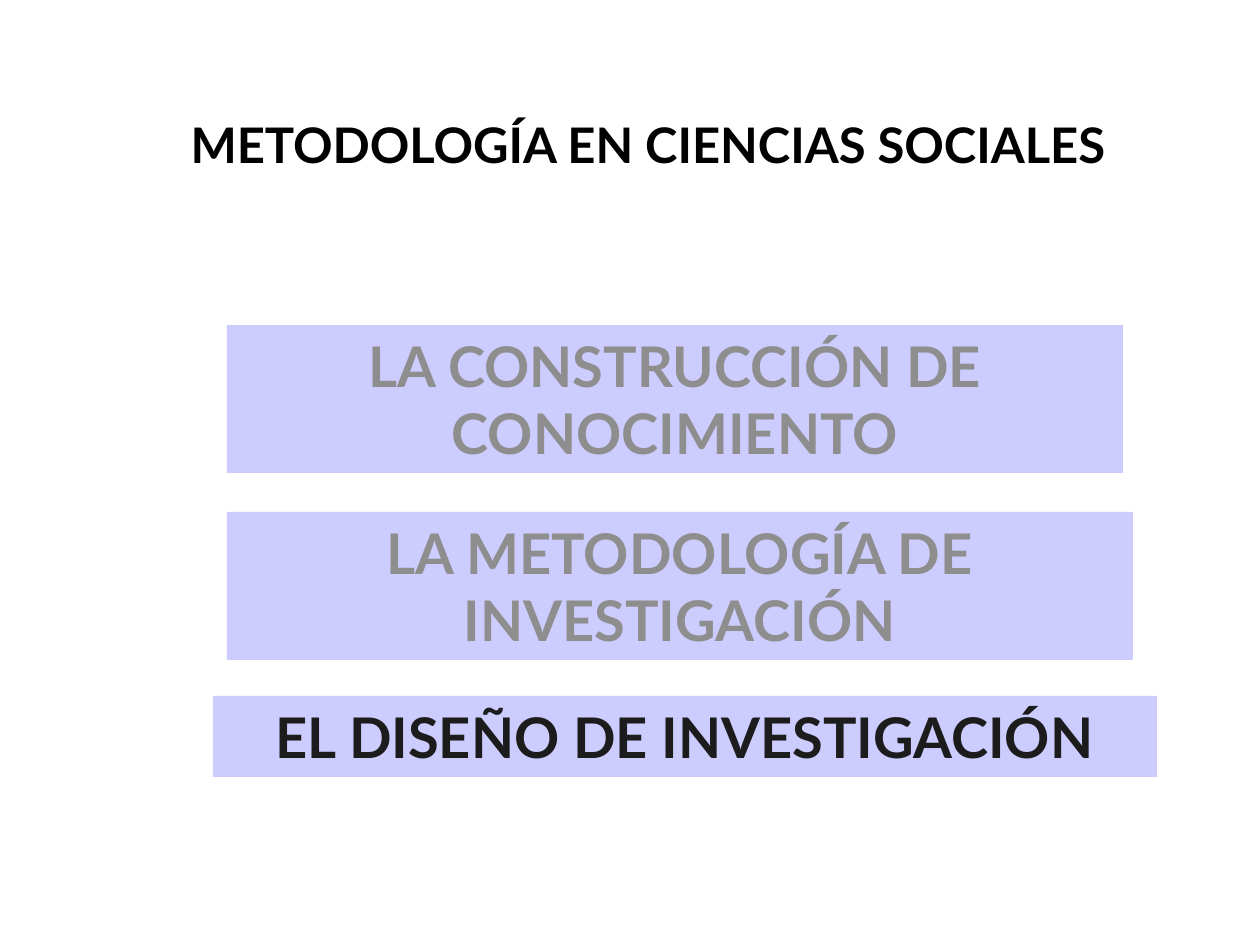
import dataclasses

import pptx
import pptx.dml.color
import pptx.enum.shapes
import pptx.enum.text
import pptx.util

EMU_PER_PX = 914400 / 126
COLORS = {"title": "000000", "band": "CCCCFF", "muted": "8E8E8E", "active": "1C1C1C"}
FRAME_FORMAT = {
    "word_wrap": True,
    "auto_size": pptx.enum.text.MSO_AUTO_SIZE.NONE,
    "vertical_anchor": pptx.enum.text.MSO_ANCHOR.TOP,
}


@dataclasses.dataclass
class Topic:
    text: str
    left: int
    top: int
    width: int
    height: int
    color: str


TOPICS = [
    Topic("LA CONSTRUCCIÓN DE CONOCIMIENTO", 227, 325, 896, 148, "muted"),
    Topic("LA METODOLOGÍA DE INVESTIGACIÓN", 227, 512, 906, 148, "muted"),
    Topic("EL DISEÑO DE INVESTIGACIÓN", 213, 696, 944, 81, "active"),
]


def px(length: int) -> int:
    return pptx.util.Emu(round(length * EMU_PER_PX))


def rgb(name: str) -> pptx.dml.color.RGBColor:
    return pptx.dml.color.RGBColor.from_string(COLORS[name])


def apply_format(target, values: dict) -> None:
    for name, value in values.items():
        setattr(target, name, value)


def write_text(shape, text: str, size: int, color: str, alignment) -> None:
    apply_format(shape.text_frame, FRAME_FORMAT)
    para = shape.text_frame.paragraphs[0]
    para.alignment = alignment
    span = para.add_run()
    span.text = text
    apply_format(span.font, {"name": "Lato", "size": pptx.util.Pt(size), "bold": True})
    span.font.color.rgb = rgb(color)


def draw_title(slide, text: str) -> None:
    title = slide.shapes.title
    apply_format(
        title,
        {"left": px(178), "top": px(108), "width": px(1053), "height": px(72)},
    )
    write_text(title, text, 28, "title", pptx.enum.text.PP_ALIGN.LEFT)


def draw_topic(slide, topic: Topic) -> None:
    box = slide.shapes.add_shape(
        pptx.enum.shapes.MSO_SHAPE.RECTANGLE,
        px(topic.left), px(topic.top), px(topic.width), px(topic.height),
    )
    box.shadow.inherit = False
    box.fill.solid()
    box.fill.fore_color.rgb = rgb("band")
    box.line.fill.background()
    write_text(box, topic.text, 32, topic.color, pptx.enum.text.PP_ALIGN.CENTER)


def main() -> None:
    deck = pptx.Presentation()
    apply_format(deck, {"slide_width": px(1260), "slide_height": px(945)})
    slide = deck.slides.add_slide(deck.slide_layouts[5])
    draw_title(slide, "METODOLOGÍA EN CIENCIAS SOCIALES")
    for topic in TOPICS:
        draw_topic(slide, topic)
    deck.save("out.pptx")


if __name__ == "__main__":
    main()
